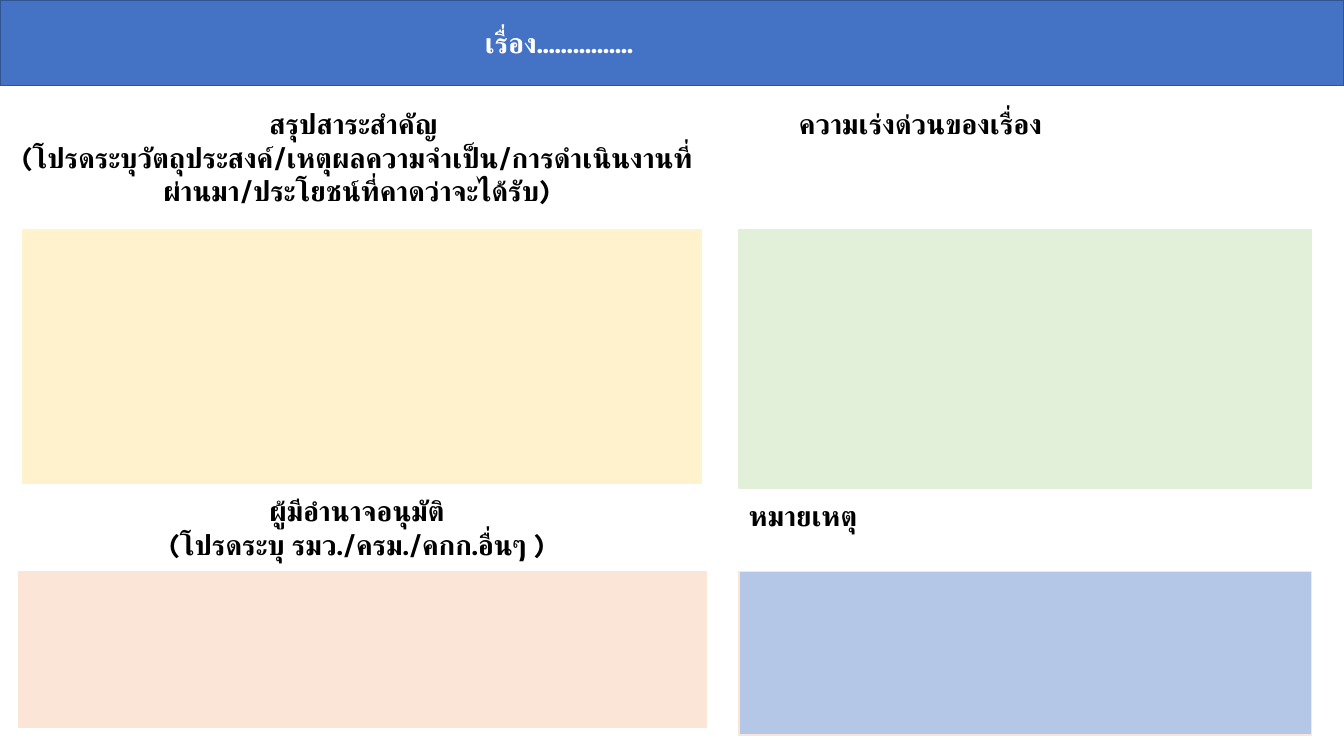
from lxml import etree
from pptx import Presentation
from pptx import util as u
from pptx.dml.color import RGBColor
from pptx.enum import shapes, text
from pptx.oxml import ns

PX = u.Inches(1) // 100  # 100 px to the inch
FONT = "Karla"

WHITE = RGBColor(0xFF, 0xFF, 0xFF)
BLACK = RGBColor(0x00, 0x00, 0x00)
BLUE = RGBColor(0x44, 0x72, 0xC4)
DARK_BLUE = RGBColor(0x32, 0x54, 0x91)
YELLOW = RGBColor(0xFF, 0xF2, 0xCC)
PEACH = RGBColor(0xFB, 0xE5, 0xD6)
GREEN = RGBColor(0xE2, 0xF0, 0xD9)
LIGHT_BLUE = RGBColor(0xB4, 0xC7, 0xE7)

# Column edges and row tops
LEFT_HEADING, RIGHT = 11, 733
TOP_PANELS, BOTTOM_PANELS = 228, 567


def emu(*lengths):
    return [length * PX for length in lengths]


def add_panel(slide, box, fill, outline):
    panel = slide.shapes.add_shape(shapes.MSO_SHAPE.RECTANGLE, *emu(*box))
    panel.shadow.inherit = False
    panel.fill.solid()
    panel.fill.fore_color.rgb = fill
    panel.line.color.rgb = outline
    panel.line.width = u.Pt(1)


def add_text(slide, box, lines, *, color=BLACK, align=text.PP_ALIGN.LEFT, size=20, bold=True):
    frame = slide.shapes.add_textbox(*emu(*box)).text_frame
    frame.word_wrap = True
    frame.auto_size = text.MSO_AUTO_SIZE.SHAPE_TO_FIT_TEXT
    for index, line in enumerate(lines):
        paragraph = frame.paragraphs[0] if index == 0 else frame.add_paragraph()
        paragraph.alignment = align
        run = paragraph.add_run()
        run.text = line
        run.font.size = u.Pt(size)
        run.font.bold = bold
        run.font.color.rgb = color
        run.font.name = FONT
        # Thai letters take the complex-script typeface
        etree.SubElement(run.font._element, ns.qn("a:cs"), typeface=FONT)


def main():
    prs = Presentation()
    prs.slide_width, prs.slide_height = emu(1333, 750)
    slide = prs.slides.add_slide(prs.slide_layouts[6])
    center = text.PP_ALIGN.CENTER

    # Title band
    add_panel(slide, (0, 0, 1333, 85), BLUE, DARK_BLUE)
    add_text(slide, (471, 20, 581, 44), ["เรื่อง................"], color=WHITE)

    # Summary
    add_text(slide, (LEFT_HEADING, 101, 686, 111), [
        "สรุปสาระสำคัญ ",
        "(โปรดระบุวัตถุประสงค์/เหตุผลความจำเป็น/การดำเนินงานที่ผ่านมา/ประโยชน์ที่คาดว่าจะได้รับ)",
    ], align=center)
    add_panel(slide, (23, TOP_PANELS, 673, 252), YELLOW, YELLOW)

    # Approving authority
    add_text(slide, (LEFT_HEADING, 485, 686, 77), [
        "ผู้มีอำนาจอนุมัติ",
        "(โปรดระบุ รมว./ครม./คกก.อื่นๆ )",
    ], align=center)
    add_panel(slide, (19, BOTTOM_PANELS, 682, 155), PEACH, PEACH)

    # Urgency
    add_text(slide, (RIGHT, 101, 360, 44), ["ความเร่งด่วนของเรื่อง"], align=center)
    add_panel(slide, (RIGHT, TOP_PANELS, 568, 257), GREEN, GREEN)

    # Remarks
    add_text(slide, (RIGHT, 490, 481, 44), ["หมายเหตุ"])
    add_panel(slide, (RIGHT, BOTTOM_PANELS, 568, 162), LIGHT_BLUE, PEACH)

    prs.save("out.pptx")


if __name__ == "__main__":
    main()
